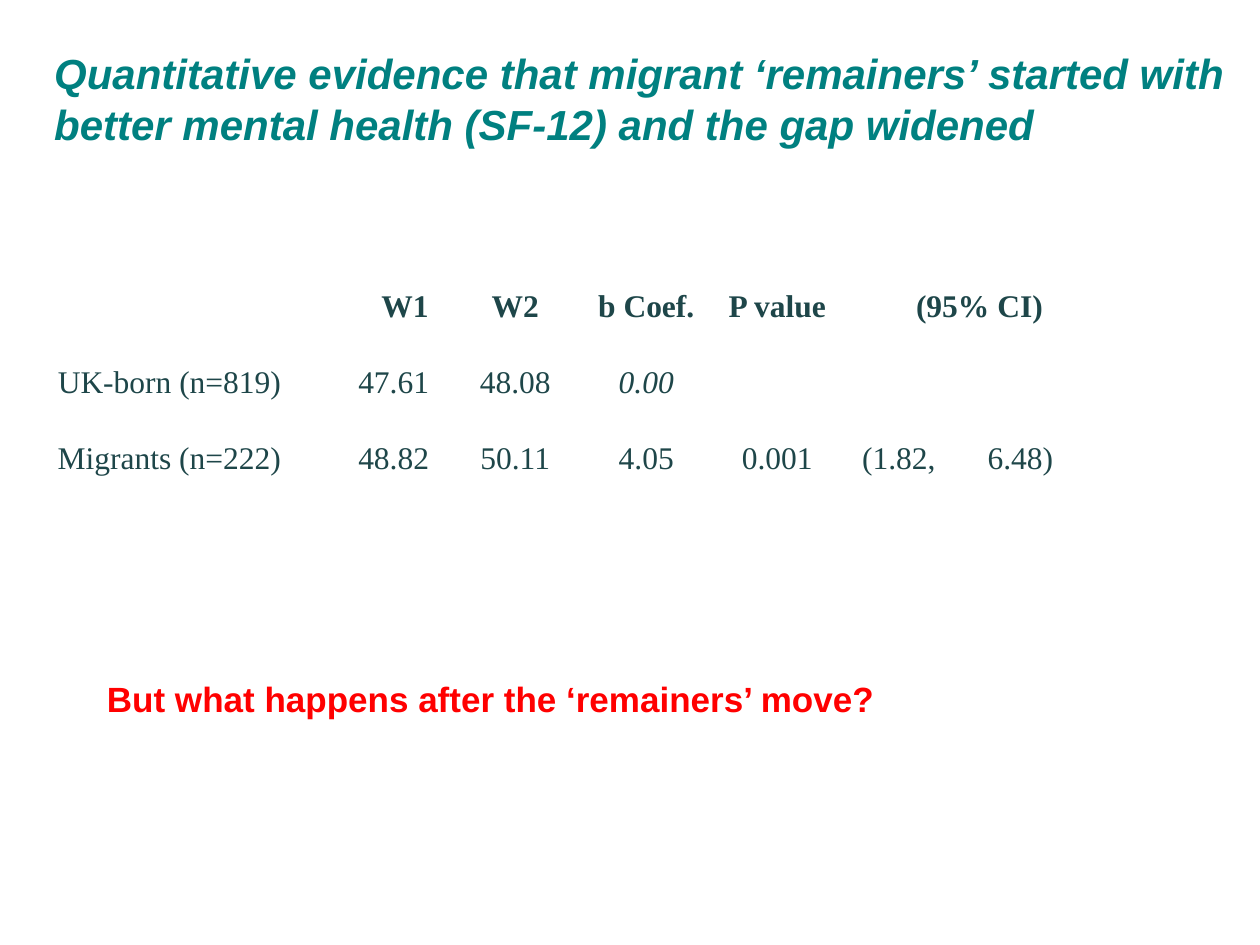
from dataclasses import dataclass

from pptx import Presentation
from pptx.dml.color import RGBColor
from pptx.enum.text import MSO_ANCHOR, MSO_AUTO_SIZE, PP_ALIGN
from pptx.util import Inches, Pt

TOP, MIDDLE = MSO_ANCHOR.TOP, MSO_ANCHOR.MIDDLE
LEFT, CENTER = PP_ALIGN.LEFT, PP_ALIGN.CENTER
FIXED = MSO_AUTO_SIZE.NONE


@dataclass(frozen=True)
class Theme:
    sans: str = "Arial"
    serif: str = "Times New Roman"
    teal: str = "008080"
    dark: str = "1E4649"
    red: str = "FF0000"
    title: int = 24
    note: int = 20
    body: int = 18


class Deck:
    def __init__(self, theme):
        self.theme = theme
        self.prs = Presentation()
        self.prs.slide_width = Inches(10)
        self.prs.slide_height = Inches(7.5)
        self.slide = self.prs.slides.add_slide(self.prs.slide_layouts[5])

    def label(self, frame, text, face, size, color, align=LEFT,
              bold=False, italic=False):
        frame.text = text
        frame.word_wrap = True
        para = frame.paragraphs[0]
        para.alignment = align
        for run in para.runs:
            font = run.font
            font.name, font.size = face, Pt(size)
            font.bold, font.italic = bold, italic
            font.color.rgb = RGBColor.from_string(color)
        return para

    def title(self, text, box):
        shape = self.slide.shapes.title
        shape.left, shape.top, shape.width, shape.height = map(Inches, box)
        frame = shape.text_frame
        frame.vertical_anchor = TOP
        frame.auto_size = FIXED
        look = self.theme
        self.label(frame, text, look.sans, look.title, look.teal,
                   bold=True, italic=True)

    def note(self, text, box):
        frame = self.slide.shapes.add_textbox(*map(Inches, box)).text_frame
        look = self.theme
        self.label(frame, text, look.sans, look.note, look.red, bold=True)

    def table(self, rows, left, top, widths, height, pads, italics):
        """Draw a plain table; pads holds wider left margins by cell."""
        frame = self.slide.shapes.add_table(
            len(rows), len(widths), Inches(left), Inches(top),
            Inches(sum(widths)), Inches(height * len(rows)))
        grid = frame.table
        grid.first_row = grid.horz_banding = False
        for col, width in zip(grid.columns, widths):
            col.width = Inches(width)
        look = self.theme
        for r, row in enumerate(rows):
            grid.rows[r].height = Inches(height)
            for c, text in enumerate(row):
                cell = grid.cell(r, c)
                cell.fill.background()
                cell.vertical_anchor = MIDDLE
                cell.margin_left = Inches(pads.get((r, c), 0.07))
                cell.margin_right = Inches(0.07)
                cell.margin_top = cell.margin_bottom = 0
                if text:
                    para = self.label(
                        cell.text_frame, text, look.serif, look.body,
                        look.dark, CENTER, r == 0, (r, c) in italics)
                    para.line_spacing = 2.0
        return grid


def main():
    deck = Deck(Theme())

    # Heading
    deck.title("Quantitative evidence that migrant ‘remainers’ started with "
               "better mental health (SF-12) and the gap widened",
               (0.33, 0.33, 9.67, 1.21))

    # Scores by group, with the interval heading over two columns
    rows = [
        ["", "W1", "W2", "b Coef.", "P value", "(95% CI)", ""],
        ["UK-born (n=819)", "47.61", "48.08", "0.00", "", "", ""],
        ["Migrants (n=222)", "48.82", "50.11", "4.05", "0.001",
         "(1.82,", "6.48)"],
    ]
    widths = [2.67, 0.89, 1.04, 1.04, 1.04, 0.89, 1.04]
    grid = deck.table(rows, 0.01, 2, widths, 0.6,
                      pads={(0, 1): 0.25, (0, 5): 0.31}, italics={(1, 3)})
    grid.cell(0, 5).merge(grid.cell(0, 6))

    # Closing question
    deck.note("But what happens after the ‘remainers’ move?",
              (0.75, 5.33, 8.58, 0.44))

    deck.prs.save("out.pptx")


if __name__ == "__main__":
    main()
